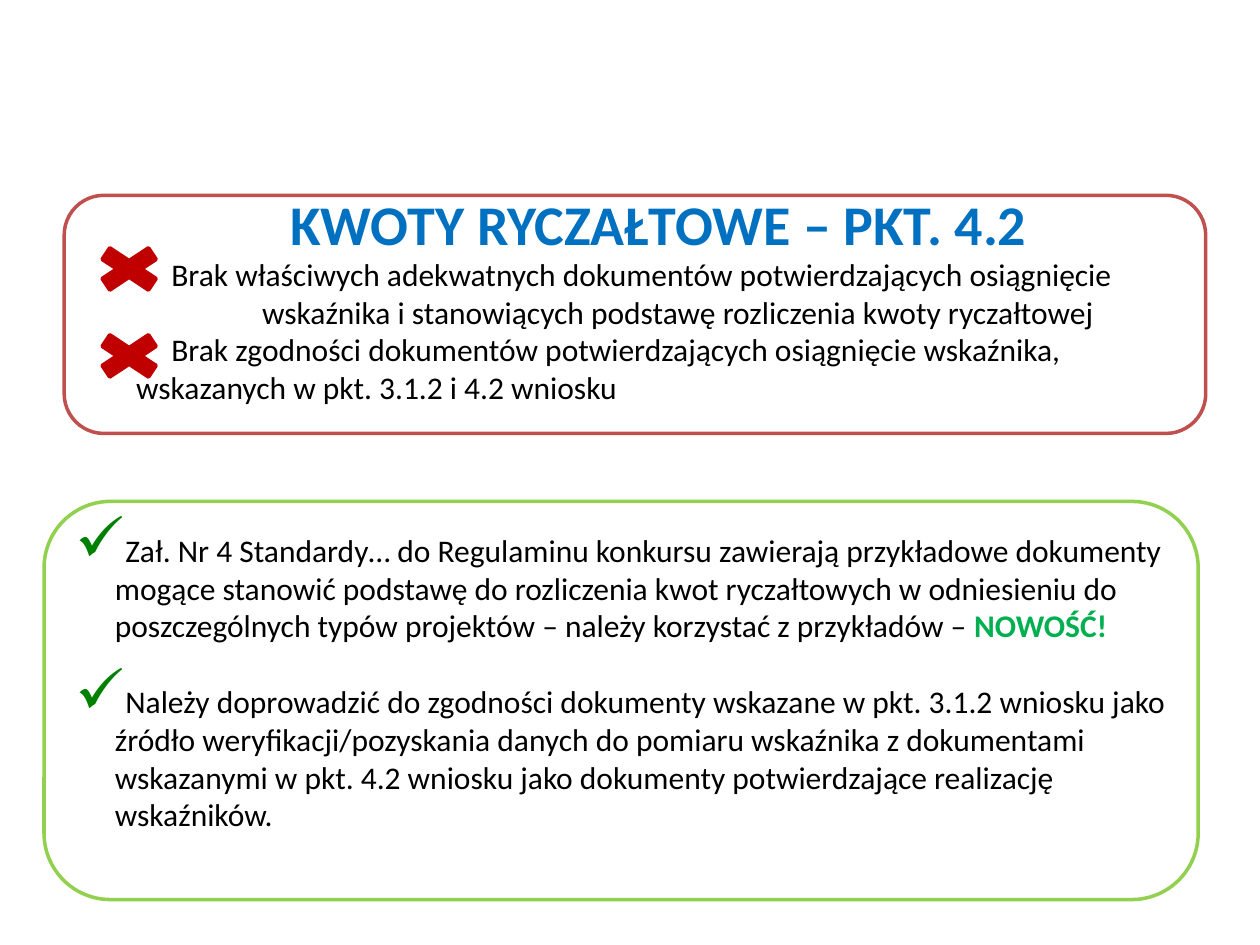
"""Build the slide on lump-sum documents: two problems and two remedies."""
from lxml import etree
from pptx import Presentation
from pptx.dml.color import RGBColor
from pptx.enum.shapes import MSO_SHAPE
from pptx.enum.text import MSO_ANCHOR, PP_ALIGN
from pptx.oxml.ns import qn
from pptx.util import Inches, Pt


def color(hex_code):
    return RGBColor.from_string(hex_code)


def add_run(paragraph, text, size, hex_code, bold=False):
    run = paragraph.add_run()
    run.text = text
    run.font.name = "Calibri"
    run.font.size = Pt(size)
    run.font.bold = bold
    run.font.color.rgb = color(hex_code)


presentation = Presentation()
presentation.slide_width = Inches(10)
presentation.slide_height = Inches(7.5)
slide = presentation.slides.add_slide(presentation.slide_layouts[5])

heading = slide.shapes.title
heading.left, heading.top = Inches(0.73), Inches(1.5)
heading.width, heading.height = Inches(9), Inches(0.54)
heading_frame = heading.text_frame
heading_frame.margin_top = heading_frame.margin_bottom = 0
heading_frame.vertical_anchor = MSO_ANCHOR.TOP
heading_frame.paragraphs[0].alignment = PP_ALIGN.CENTER
add_run(heading_frame.paragraphs[0], "KWOTY RYCZAŁTOWE – PKT. 4.2", 32, "0070C0", True)

problems = [
    (1.38, -0.72, "Brak właściwych adekwatnych dokumentów potwierdzających osiągnięcie "
                  "wskaźnika i stanowiących podstawę rozliczenia kwoty ryczałtowej"),
    (0.38, 0.28, "Brak zgodności dokumentów potwierdzających osiągnięcie wskaźnika, "
                 "wskazanych w pkt. 3.1.2 i 4.2 wniosku"),
]
remedies = [
    (0.31, -0.31, "Zał. Nr 4 Standardy… do Regulaminu konkursu zawierają przykładowe "
                  "dokumenty mogące stanowić podstawę do rozliczenia kwot ryczałtowych "
                  "w odniesieniu do poszczególnych typów projektów – należy korzystać "
                  "z przykładów – "),
    (0.31, -0.31, "Należy doprowadzić do zgodności dokumenty wskazane w pkt. 3.1.2 wniosku "
                  "jako źródło weryfikacji/pozyskania danych do pomiaru wskaźnika "
                  "z dokumentami wskazanymi w pkt. 4.2 wniosku jako dokumenty "
                  "potwierdzające realizację wskaźników."),
]
panels = [
    ((0.51, 1.55, 9.06, 1.89), "C0504D", 0.38, 0, False, problems),
    ((0.35, 3.98, 9.16, 3.16), "92D050", 0.08, 21.6, True, remedies),
]
panel_frames = []
for place, outline, top_margin, gap, checked, points in panels:
    panel = slide.shapes.add_shape(MSO_SHAPE.ROUNDED_RECTANGLE, *map(Inches, place))
    panel.shadow.inherit = False
    panel.fill.background()
    panel.line.color.rgb = color(outline)
    panel.line.width = Pt(2)
    frame = panel.text_frame
    frame.word_wrap = True
    frame.vertical_anchor = MSO_ANCHOR.TOP
    frame.margin_top = Inches(top_margin)
    panel_frames.append(frame)
    for number, (margin, indent, text) in enumerate(points):
        point = frame.add_paragraph() if number else frame.paragraphs[0]
        point.alignment = PP_ALIGN.LEFT
        properties = point._p.get_or_add_pPr()
        properties.set("marL", str(Inches(margin)))
        properties.set("indent", str(Inches(indent)))
        if checked:
            bullet_color = etree.SubElement(properties, qn("a:buClr"))
            etree.SubElement(bullet_color, qn("a:srgbClr"), val="008000")
            etree.SubElement(properties, qn("a:buSzPct"), val="200000")
            etree.SubElement(properties, qn("a:buChar"), char="✓")
        if number:
            point.space_before = Pt(gap)
        add_run(point, text, 18, "000000")

add_run(panel_frames[1].paragraphs[0], "NOWOŚĆ!", 18, "00B050", True)

for top in (1.9, 2.59):
    cross = slide.shapes.add_shape(
        MSO_SHAPE.MATH_MULTIPLY, Inches(0.67), Inches(top), Inches(0.71), Inches(0.47))
    cross.shadow.inherit = False
    cross.fill.solid()
    cross.fill.fore_color.rgb = color("C00000")
    cross.line.color.rgb = color("C00000")
    cross.line.width = Pt(2)

presentation.save("out.pptx")
